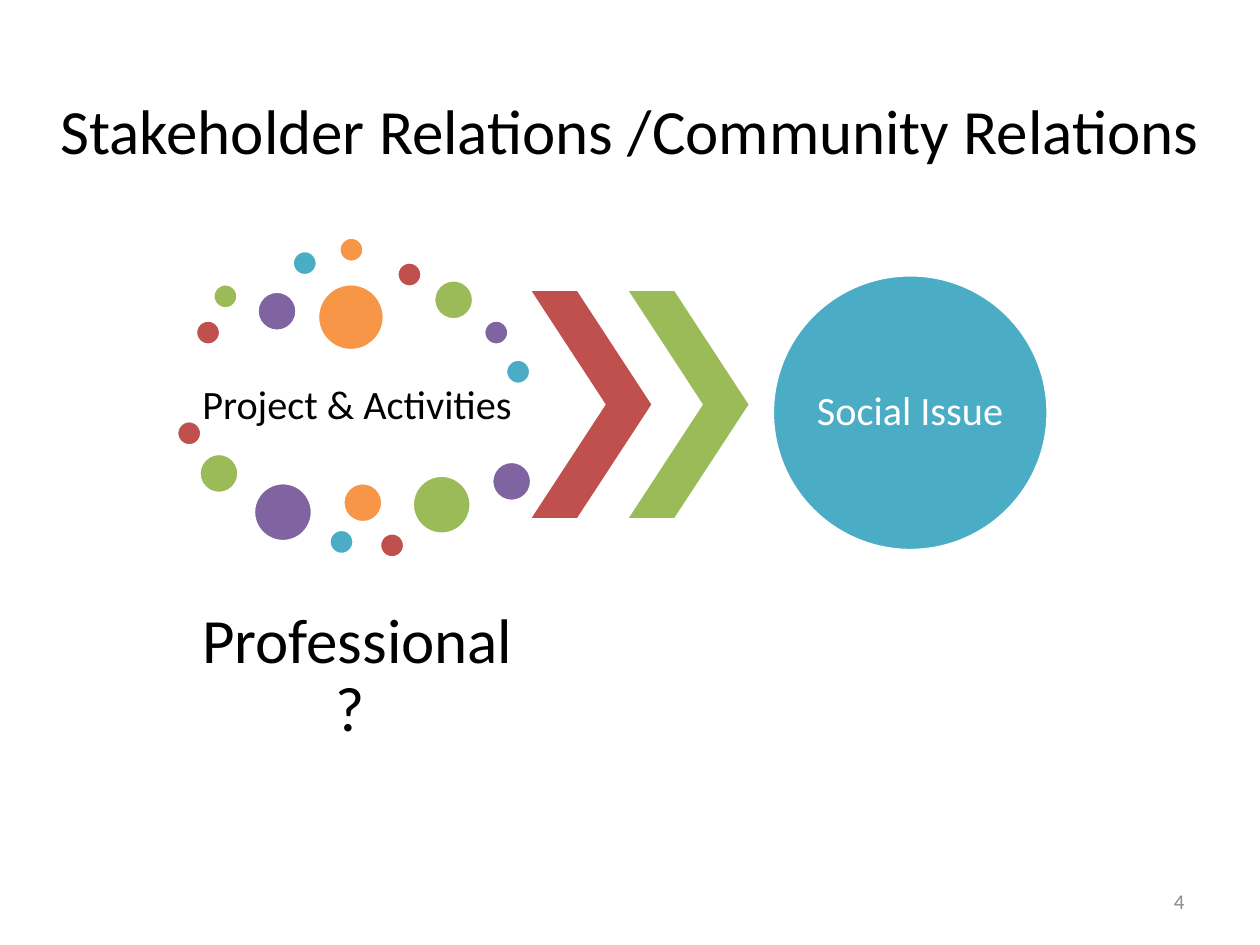
from itertools import cycle

from pptx import Presentation
from pptx.dml.color import RGBColor
from pptx.enum.shapes import MSO_SHAPE as SHAPE
from pptx.enum.text import MSO_ANCHOR as ANCHOR, PP_ALIGN as ALIGN
from pptx.util import Cm, Pt

RED = RGBColor(0xC0, 0x50, 0x4D)
GREEN = RGBColor(0x9B, 0xBB, 0x59)
PURPLE = RGBColor(0x80, 0x64, 0xA2)
TEAL = RGBColor(0x4B, 0xAC, 0xC6)
ORANGE = RGBColor(0xF7, 0x96, 0x46)
BLACK = RGBColor(0, 0, 0)
WHITE = RGBColor(0xFF, 0xFF, 0xFF)
GREY = RGBColor(0x8C, 0x8C, 0x8C)
ACCENTS = [RED, GREEN, PURPLE, TEAL, ORANGE]

SMALL, MEDIUM, LARGE, LARGEST = 0.51, 0.81, 1.19, 1.35
DOTS = [
    (3.94, 6.45, SMALL), (4.29, 5.72, SMALL), (5.18, 5.87, MEDIUM),
    (5.89, 5.05, SMALL), (6.83, 4.78, SMALL), (8, 5.28, SMALL),
    (8.74, 5.64, MEDIUM), (9.75, 6.45, SMALL), (10.19, 7.24, SMALL),
    (6.4, 5.72, LARGEST), (3.56, 8.48, SMALL), (4.01, 9.14, MEDIUM),
    (5.11, 9.73, LARGE), (6.63, 10.67, SMALL), (6.91, 9.73, MEDIUM),
    (7.65, 10.74, SMALL), (8.31, 9.58, LARGE), (9.91, 9.3, MEDIUM),
]
CHEVRONS = [RED, GREEN]
CHEVRON_LEFT, CHEVRON_STEP = 10.72, 1.96
ISSUE_CIRCLE = (15.57, 5.54, 5.56)

TEXTS = [
    ("Stakeholder Relations /Community Relations",
     (0.3, 1.32, 24.79, 2.59), 36, BLACK, ALIGN.CENTER, 0.25, 1),
    ("Project & Activities ", (3.94, 7.11, 6.53, 2.16), 23, BLACK, ALIGN.CENTER, 0.08, 0.9),
    ("Professional ? ", (3.94, 11.63, 6.53, 4.04), 36, BLACK, ALIGN.CENTER, 0.13, 0.9),
    ("Social Issue", (16.38, 6.35, 3.94, 3.94), 23, WHITE, ALIGN.CENTER, 0, 0.9),
    ("4", (18.21, 17.65, 5.92, 1.02), 12, GREY, ALIGN.RIGHT, 0.25, 1),
]


def add_shape(s, kind, box, fill):
    sp = s.shapes.add_shape(kind, *map(Cm, box))
    sp.shadow.inherit = False
    sp.fill.solid()
    sp.fill.fore_color.rgb = fill
    sp.line.fill.background()
    return sp


def add_circle(s, left, top, size, fill):
    sp = add_shape(s, SHAPE.OVAL, (left, top, size, size), fill)
    sp.line.color.rgb = WHITE
    sp.line.width = Pt(2)


def add_text(s, text, box, size, color, align, inset, spacing):
    tf = s.shapes.add_textbox(*map(Cm, box)).text_frame
    tf.word_wrap = True
    tf.vertical_anchor = ANCHOR.MIDDLE
    tf.margin_left = tf.margin_right = Cm(inset)
    tf.margin_top = tf.margin_bottom = Cm(min(inset, 0.13))
    p = tf.paragraphs[0]
    p.alignment = align
    p.line_spacing = spacing
    r = p.add_run()
    r.text = text
    r.font.name = "Calibri"
    r.font.size = Pt(size)
    r.font.color.rgb = color


prs = Presentation()
prs.slide_width, prs.slide_height = Cm(25.4), Cm(19.05)
s = prs.slides.add_slide(prs.slide_layouts[6])

for dot, color in zip(DOTS, cycle(ACCENTS)):
    add_circle(s, *dot, color)

for i, color in enumerate(CHEVRONS):
    box = (CHEVRON_LEFT + i * CHEVRON_STEP, 5.87, 2.41, 4.57)
    add_shape(s, SHAPE.CHEVRON, box, color).adjustments[0] = 0.62

add_circle(s, *ISSUE_CIRCLE, TEAL)

for item in TEXTS:
    add_text(s, *item)

prs.save("out.pptx")
